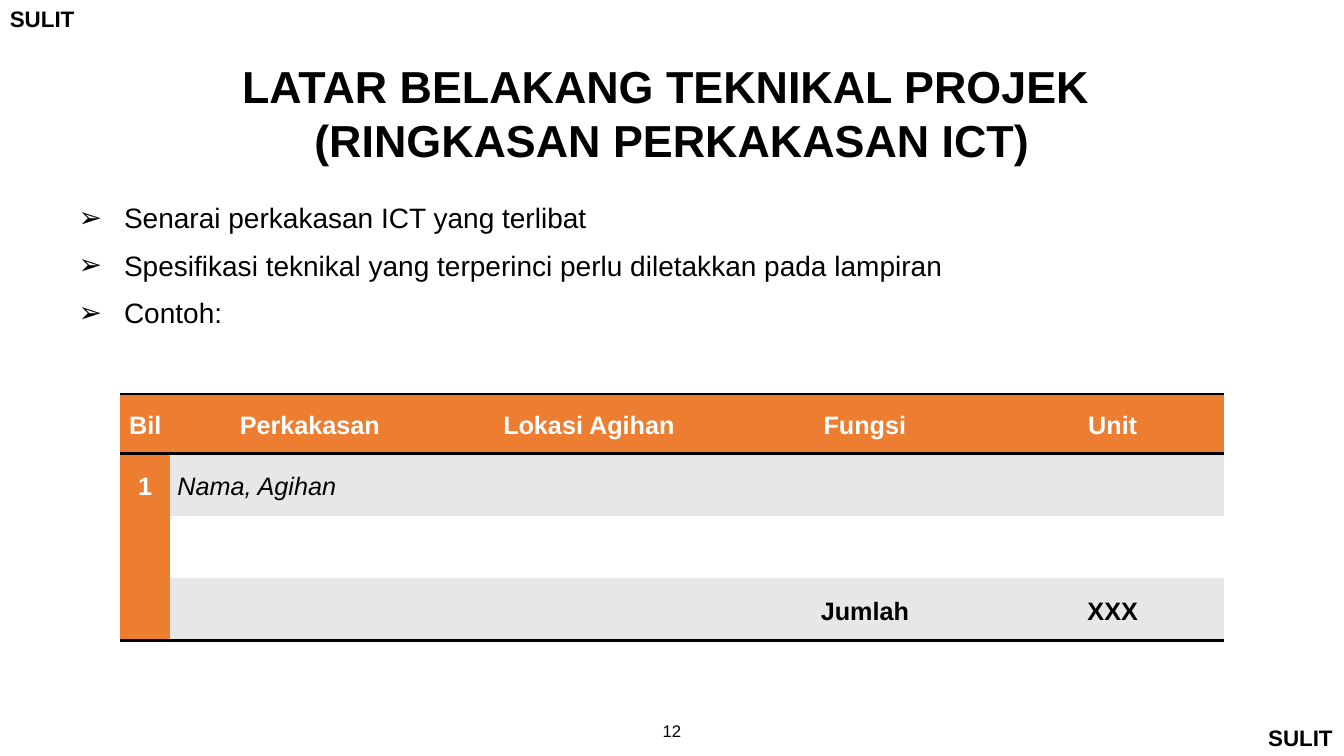
from dataclasses import dataclass

from lxml.etree import SubElement
from pptx import Presentation
from pptx.dml.color import RGBColor as RGB
from pptx.enum.text import MSO_ANCHOR as ANCHOR, MSO_AUTO_SIZE as AUTOSIZE, PP_ALIGN as ALIGN
from pptx.oxml import parse_xml
from pptx.oxml.ns import nsdecls, qn
from pptx.util import Inches, Pt


@dataclass(frozen=True)
class Theme:
    font: str = "Arial"
    ink: RGB = RGB(0, 0, 0)
    paper: RGB = RGB(255, 255, 255)
    accent: RGB = RGB(0xED, 0x7D, 0x31)
    band: RGB = RGB(0xE7, 0xE7, 0xE7)
    title: int = 32
    body: int = 20
    cell: int = 18
    mark: int = 16
    number: int = 12
    rule: int = 2
    plain_table: str = "{2D5ABB26-0587-4C30-8999-92F81FD0307C}"


class Deck:
    """Builds one slide, with every place given in percent of its size."""

    def __init__(self, theme):
        self.theme = theme
        self.file = Presentation()
        self.file.slide_width, self.file.slide_height = Inches(13.33), Inches(7.5)
        self.slide = self.file.slides.add_slide(self.file.slide_layouts[1])

    def box(self, left, top, width, height):
        across, down = self.file.slide_width / 100, self.file.slide_height / 100
        return [int(v) for v in (left * across, top * down, width * across, height * down)]

    def move(self, holder, area):
        holder.left, holder.top, holder.width, holder.height = self.box(*area)
        holder.text_frame.auto_size = AUTOSIZE.NONE
        return holder.text_frame

    def style(self, line, size, color=None, bold=False, italic=False, align=ALIGN.LEFT):
        line.alignment = align
        font = line.font
        font.name, font.size, font.bold, font.italic = self.theme.font, Pt(size), bold, italic
        font.color.rgb = color or self.theme.ink

    def title(self, area, lines):
        frame = self.move(self.slide.shapes.title, area)
        frame.text = "\n".join(lines)
        frame.word_wrap, frame.vertical_anchor = False, ANCHOR.TOP
        frame.margin_left = frame.margin_right = Inches(0.07)
        frame.margin_top = frame.margin_bottom = Inches(0.04)
        for line in frame.paragraphs:
            self.style(line, self.theme.title, bold=True, align=ALIGN.CENTER)

    def bullets(self, area, points):
        frame = self.move(self.slide.placeholders[1], area)
        frame.text = "\n".join(points)
        frame.vertical_anchor = ANCHOR.TOP
        for point in frame.paragraphs:
            point.space_before = Pt(10)
            layout = point._p.get_or_add_pPr()
            layout.set("marL", str(Inches(0.57)))
            layout.set("indent", str(Inches(-0.45)))
            SubElement(layout, qn("a:buChar"), char="➢")
            self.style(point, self.theme.body, align=ALIGN.JUSTIFY)

    def label(self, area, words, size, bold=False, align=ALIGN.LEFT, wrap=False):
        frame = self.slide.shapes.add_textbox(*self.box(*area)).text_frame
        frame.word_wrap = wrap
        frame.text = words
        self.style(frame.paragraphs[0], size, bold=bold, align=align)

    def rule(self, cell, side):
        cell._tc.get_or_add_tcPr().insert(0, parse_xml(
            f'<a:{side} {nsdecls("a")} w="{Pt(self.theme.rule)}"><a:solidFill>'
            f'<a:srgbClr val="{self.theme.ink}"/></a:solidFill></a:{side}>'))

    def table(self, area, widths, heights, rows):
        theme = self.theme
        left, top, width, height = self.box(*area)
        grid = self.slide.shapes.add_table(
            len(rows), len(widths), left, top, width, height).table
        grid._tbl.tblPr.find(qn("a:tableStyleId")).text = theme.plain_table
        grid.first_row = grid.horz_banding = False
        for column, share in zip(grid.columns, widths):
            column.width = int(width * share / sum(widths))
        for row, share in zip(grid.rows, heights):
            row.height = int(height * share / sum(heights))
        for r, words in enumerate(rows):
            for c, word in enumerate(words):
                cell = grid.cell(r, c)
                heading = r == 0 or c == 0
                example = (r, c) == (1, 1)
                if r in (0, len(rows) - 1):
                    self.rule(cell, "a:lnB"[2:])
                if r == 0:
                    self.rule(cell, "lnT")
                cell.fill.solid()
                cell.fill.fore_color.rgb = (
                    theme.accent if heading else theme.band if r % 2 else theme.paper)
                cell.vertical_anchor = ANCHOR.MIDDLE
                cell.margin_left = cell.margin_right = Inches(0.07)
                cell.margin_top = cell.margin_bottom = 0
                cell.text = word
                line = cell.text_frame.paragraphs[0]
                line.line_spacing, line.space_before = 1.15, Pt(3)
                self.style(line, theme.cell, theme.paper if heading else theme.ink,
                           bold=not example, italic=example,
                           align=ALIGN.LEFT if example else ALIGN.CENTER)


def main():
    theme = Theme()
    deck = Deck(theme)
    deck.title((17.18, 7.2, 65.64, 15.33),
               ["LATAR BELAKANG TEKNIKAL PROJEK ", "(RINGKASAN PERKAKASAN ICT)"])
    deck.bullets((4.2, 25.87, 89.8, 31.47), [
        "Senarai perkakasan ICT yang terlibat",
        "Spesifikasi teknikal yang terperinci perlu diletakkan pada lampiran",
        "Contoh:",
    ])
    deck.table((8.93, 52.13, 82.15, 32.6),
               [0.5, 2.77, 2.77, 2.71, 2.21], [0.59, 0.62, 0.62, 0.62], [
        ["Bil", "Perkakasan", "Lokasi Agihan", "Fungsi", "Unit"],
        ["1", "Nama, Agihan", "", "", ""],
        ["", "", "", "", ""],
        ["", "", "", "Jumlah", "XXX"],
    ])
    for left, top in [(0, 0), (93.62, 95.07)]:
        deck.label((left, top, 6.38, 4.93), "SULIT", theme.mark, bold=True)
    deck.label((48, 94.67, 4, 5.33), "12", theme.number, align=ALIGN.CENTER, wrap=True)
    deck.file.save("out.pptx")


if __name__ == "__main__":
    main()
